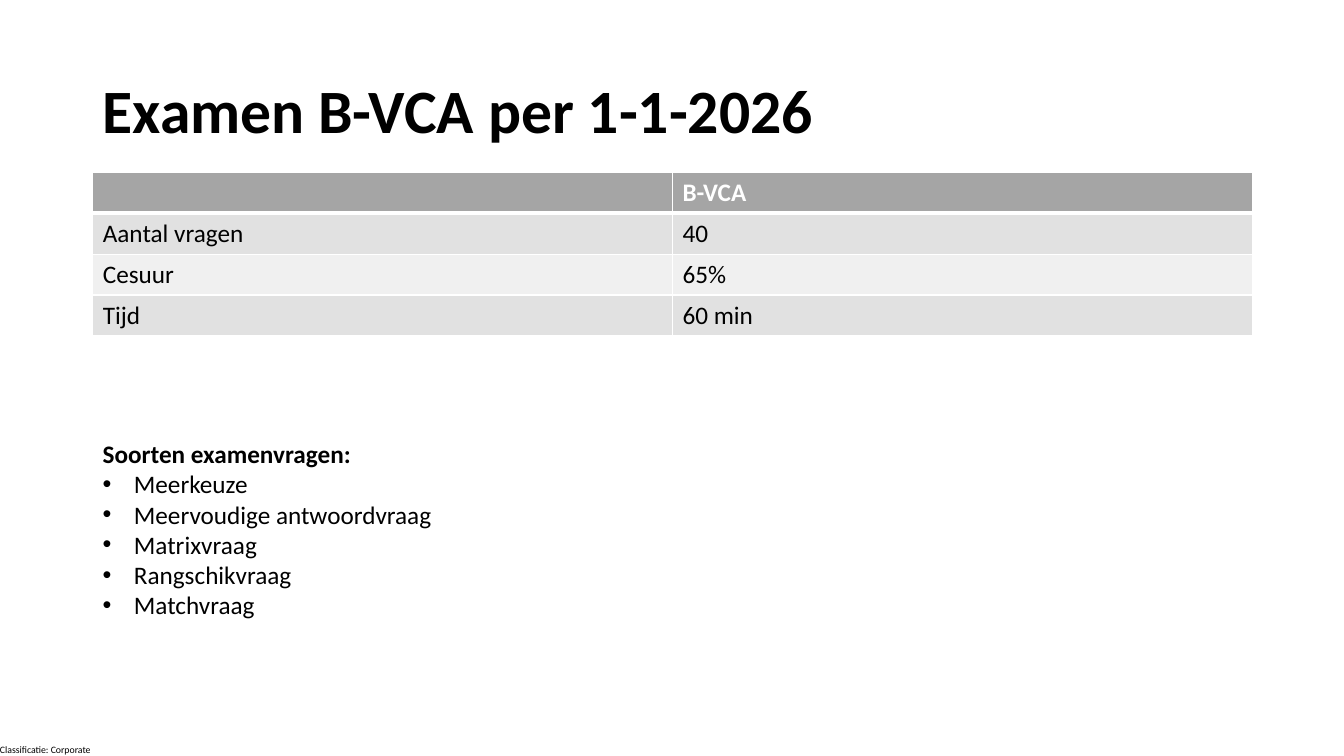
from lxml.etree import SubElement
from pptx import Presentation
from pptx.dml.color import RGBColor
from pptx.enum.text import MSO_ANCHOR as Anchor, MSO_AUTO_SIZE as AutoSize
from pptx.oxml.ns import qn
from pptx.util import Inches, Pt

COLORS = {
    "text": "000000",
    "white": "FFFFFF",
    "header": "A5A5A5",
    "odd_row": "E1E1E1",
    "even_row": "F0F0F0",
}
EXAM_ROWS = [
    ("", "B-VCA"),
    ("Aantal vragen", "40"),
    ("Cesuur", "65%"),
    ("Tijd", "60 min"),
]
QUESTION_TYPES = [
    "Meerkeuze",
    "Meervoudige antwoordvraag",
    "Matrixvraag",
    "Rangschikvraag",
    "Matchvraag",
]


class SlideBuilder:
    font_name = "Calibri"
    bullet_indent = Inches(0.31)

    def __init__(self, slide):
        self.slide = slide

    def style(self, paragraph, size, bold=False, color="text"):
        font = paragraph.font
        font.name = self.font_name
        font.size = Pt(size)
        font.bold = bold
        font.color.rgb = RGBColor.from_string(COLORS[color])

    def text(self, content, left, top, width, height, size, bold=False,
             anchor=Anchor.TOP, margin=None, spacing=None, wrap=True):
        box = self.slide.shapes.add_textbox(
            Inches(left), Inches(top), Inches(width), Inches(height))
        frame = box.text_frame
        frame.word_wrap = wrap
        frame.auto_size = AutoSize.NONE
        frame.vertical_anchor = anchor
        if margin is not None:
            frame.margin_left = frame.margin_right = Inches(margin)
            frame.margin_top = frame.margin_bottom = Inches(margin)
        frame.text = content
        heading = frame.paragraphs[0]
        heading.line_spacing = spacing
        self.style(heading, size, bold)
        return frame

    def bullets(self, frame, items, size):
        for item in items:
            paragraph = frame.add_paragraph()
            paragraph.text = item
            properties = paragraph._p.get_or_add_pPr()
            properties.set("marL", str(self.bullet_indent))
            properties.set("indent", str(-self.bullet_indent))
            SubElement(properties, qn("a:buFont"), typeface="Arial")
            SubElement(properties, qn("a:buChar"), char="•")
            self.style(paragraph, size)

    def borders(self, cell, top, bottom):
        """Draw white cell borders; top and bottom are widths in points."""
        properties = cell._tc.get_or_add_tcPr()
        for side, width in (("L", 1), ("R", 1), ("T", top), ("B", bottom)):
            line = SubElement(properties, qn(f"a:ln{side}"), w=str(Pt(width)))
            fill = SubElement(line, qn("a:solidFill"))
            SubElement(fill, qn("a:srgbClr"), val=COLORS["white"])

    def table(self, rows, left, top, width, row_height, size):
        table = self.slide.shapes.add_table(
            len(rows), len(rows[0]), Inches(left), Inches(top),
            Inches(width), Inches(row_height * len(rows))).table
        for row_index, row in enumerate(rows):
            is_header = row_index == 0
            band = "odd_row" if row_index % 2 else "even_row"
            for column_index, content in enumerate(row):
                cell = table.cell(row_index, column_index)
                cell.text = content
                self.style(cell.text_frame.paragraphs[0], size, is_header,
                           "white" if is_header else "text")
                self.borders(cell, top=3 if row_index == 1 else 1,
                             bottom=3 if is_header else 1)
                cell.fill.solid()
                cell.fill.fore_color.rgb = RGBColor.from_string(
                    COLORS["header" if is_header else band])


def main():
    deck = Presentation()
    deck.slide_width, deck.slide_height = Inches(13.33), Inches(7.5)
    builder = SlideBuilder(deck.slides.add_slide(deck.slide_layouts[6]))

    builder.text("Classificatie: Corporate", 0, 7.38, 0.94, 0.12, 7,
                 margin=0, wrap=False)
    builder.table(EXAM_ROWS, 0.92, 1.71, 11.5, 0.405, 18)
    builder.text("Examen B-VCA per 1-1-2026", 0.92, 0.4, 11.5, 1.45, 44,
                 bold=True, anchor=Anchor.MIDDLE, spacing=0.9)
    question_frame = builder.text("Soorten examenvragen:", 0.92, 4.3, 10.72,
                                  1.92, 18, bold=True)
    builder.bullets(question_frame, QUESTION_TYPES, 18)

    deck.save("out.pptx")


if __name__ == "__main__":
    main()
